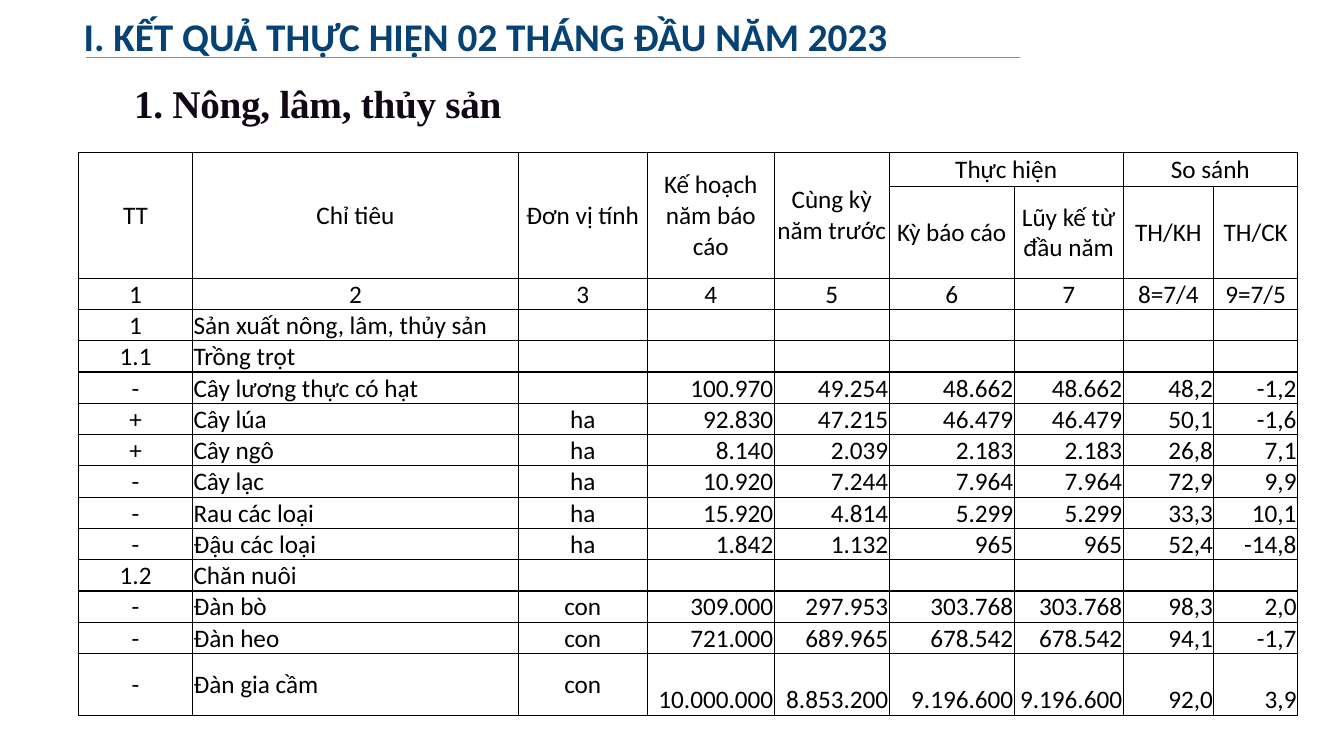
from lxml import etree
from pptx import Presentation, util as u
from pptx.dml.color import RGBColor
from pptx.enum import shapes, text
from pptx.oxml import ns

NAVY = RGBColor(0x06, 0x42, 0x73)
INK = RGBColor(0x10, 0x07, 0x17)
BLUE = RGBColor(0x5B, 0x9B, 0xD5)
BLACK = RGBColor(0, 0, 0)
LEFT, MID, RIGHT = text.PP_ALIGN.LEFT, text.PP_ALIGN.CENTER, text.PP_ALIGN.RIGHT
TOP, CORE, BASE = text.MSO_ANCHOR.TOP, text.MSO_ANCHOR.MIDDLE, text.MSO_ANCHOR.BOTTOM

WIDTHS = [1.13, 3.23, 1.28, 1.26, 1.14, 1.24, 1.08, 0.9, 0.83]
HEIGHTS = [0.34, 0.87] + [0.31] * 12 + [0.61]
SPANS = [(0, col, 1, col) for col in range(5)] + [(0, 5, 0, 6), (0, 7, 0, 8)]
HEADS = 3
ROWS = """TT|Chỉ tiêu|Đơn vị tính|Kế hoạch năm báo cáo|Cùng kỳ năm trước|Thực hiện||So sánh|
|||||Kỳ báo cáo|Lũy kế từ đầu năm|TH/KH|TH/CK
1|2|3|4|5|6|7|8=7/4|9=7/5
1|Sản xuất nông, lâm, thủy sản|||||||
1.1|Trồng trọt|||||||
-|Cây lương thực có hạt||100.970|49.254|48.662|48.662|48,2|-1,2
+|Cây lúa|ha|92.830|47.215|46.479|46.479|50,1|-1,6
+|Cây ngô|ha|8.140|2.039|2.183|2.183|26,8|7,1
-|Cây lạc|ha|10.920|7.244|7.964|7.964|72,9|9,9
-|Rau các loại|ha|15.920|4.814|5.299|5.299|33,3|10,1
-|Đậu các loại|ha|1.842|1.132|965|965|52,4|-14,8
1.2|Chăn nuôi|||||||
-|Đàn bò|con|309.000|297.953|303.768|303.768|98,3|2,0
-|Đàn heo|con|721.000|689.965|678.542|678.542|94,1|-1,7
-|Đàn gia cầm|con|10.000.000|8.853.200|9.196.600|9.196.600|92,0|3,9"""


class Deck:
    head = dict(name="Calibri", size=u.Pt(28), bold=True)
    sub = dict(name="Times New Roman", size=u.Pt(28), bold=True)
    body = dict(name="Calibri", size=u.Pt(18), bold=False)

    def __init__(self):
        self.prs = Presentation()
        self.prs.slide_width, self.prs.slide_height = u.Inches(13.33), u.Inches(7.5)
        self.slide = self.prs.slides.add_slide(self.prs.slide_layouts[5])

    def box(self, x, y, w, h):
        wide, high = self.prs.slide_width / 100, self.prs.slide_height / 100
        return [round(v) for v in (x * wide, y * high, w * wide, h * high)]

    def put(self, item, **vals):
        for key, val in vals.items():
            setattr(item, key, val)

    def words(self, frame, line, style, color, align=LEFT):
        para = frame.paragraphs[0]
        para.alignment = align
        if line:
            run = para.add_run()
            run.text = line
            self.put(run.font, **style)
            run.font.color.rgb = color
            return run

    def title(self, line, *area):
        shape = self.slide.shapes.title
        self.put(shape, **dict(zip(("left", "top", "width", "height"), self.box(*area))))
        self.put(shape.text_frame, word_wrap=True, vertical_anchor=CORE,
                 auto_size=text.MSO_AUTO_SIZE.NONE)
        self.words(shape.text_frame, line, self.head, NAVY)

    def label(self, line, *area):
        frame = self.slide.shapes.add_textbox(*self.box(*area)).text_frame
        self.put(frame, word_wrap=False, vertical_anchor=TOP, margin_top=u.Inches(0.09),
                 margin_left=u.Inches(0.11), margin_bottom=0)
        run = self.words(frame, line, self.sub, INK)
        run._r.get_or_add_rPr().set("spc", "-20")

    def rule(self, x, y, w):
        left, top, wide, _ = self.box(x, y, w, 0)
        line = self.slide.shapes.add_connector(
            shapes.MSO_CONNECTOR.STRAIGHT, left, top, left + wide, top)
        line.line.color.rgb, line.line.width = BLUE, u.Pt(1)
        etree.SubElement(line._element.spPr, ns.qn("a:effectLst"))

    def edge(self, cell):
        props = cell._tc.get_or_add_tcPr()
        for spot, side in enumerate("LRTB"):
            line = etree.Element(ns.qn("a:ln" + side), w=str(u.Pt(1)))
            fill = etree.SubElement(line, ns.qn("a:solidFill"))
            etree.SubElement(fill, ns.qn("a:srgbClr"), val=str(BLACK))
            props.insert(spot, line)

    def table(self, rows, *area):
        left, top, wide, high = self.box(*area)
        grid = self.slide.shapes.add_table(
            len(rows), len(WIDTHS), left, top, wide, high).table
        self.put(grid, first_row=False, horz_banding=False)
        for col, part in zip(grid.columns, WIDTHS):
            col.width = round(wide * part / sum(WIDTHS))
        for row, part in zip(grid.rows, HEIGHTS):
            row.height = round(high * part / sum(HEIGHTS))
        pad = u.Inches(0.01)
        for r, row in enumerate(rows):
            for c, line in enumerate(row):
                cell = grid.cell(r, c)
                num = r >= HEADS and c > 2
                align = RIGHT if num else LEFT if r >= HEADS and c == 1 else MID
                self.put(cell, margin_left=pad, margin_right=pad, margin_top=pad,
                         margin_bottom=0, vertical_anchor=BASE if num else CORE)
                cell.fill.background()
                self.edge(cell)
                self.words(cell.text_frame, line, self.body, BLACK, align)
        for r, c, low, far in SPANS:
            grid.cell(r, c).merge(grid.cell(low, far))


def main():
    deck = Deck()
    deck.title("I. KẾT QUẢ THỰC HIỆN 02 THÁNG ĐẦU NĂM 2023", 5.48, 0.67, 92.27, 8.27)
    deck.rule(6.38, 7.6, 69.54)
    deck.label("1. Nông, lâm, thủy sản", 9.15, 9.33, 30, 7.6)
    deck.table([row.split("|") for row in ROWS.split("\n")], 5.85, 20.13, 90.7, 74)
    deck.prs.save("out.pptx")


if __name__ == "__main__":
    main()
